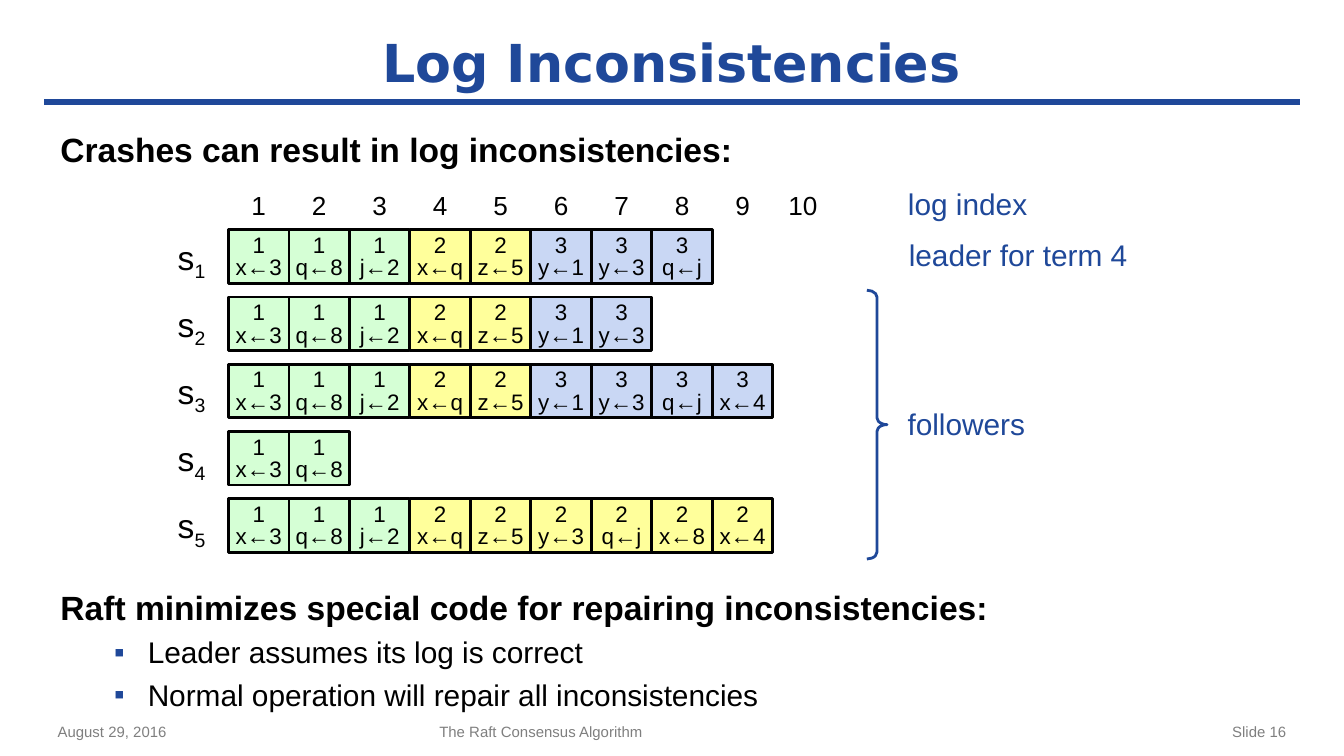
import pptx
import pptx.dml.color
import pptx.enum.shapes
import pptx.enum.text
import pptx.oxml
import pptx.oxml.ns
import pptx.util

Inches = pptx.util.Inches
Pt = pptx.util.Pt
ALIGN = pptx.enum.text.PP_ALIGN
ANCHOR = pptx.enum.text.MSO_ANCHOR
SHAPE = pptx.enum.shapes.MSO_SHAPE

BLUE, BLACK, GRAY = "1F4899", "000000", "7F7F7F"
TERM_FILLS = {1: "D5FFD5", 2: "FFFF9B", 3: "C9D7F4"}
CELL_WIDTH, CELL_HEIGHT, ROW_PITCH = 0.45, 0.4, 0.5
INDEX_COUNT = 10

COMMON_LOG = [(1, "x←3"), (1, "q←8"), (1, "j←2"), (2, "x←q"), (2, "z←5")]
LEADER_LOG = COMMON_LOG + [(3, "y←1"), (3, "y←3"), (3, "q←j")]
SERVER_LOGS = [
    LEADER_LOG,
    LEADER_LOG[:7],
    LEADER_LOG + [(3, "x←4")],
    COMMON_LOG[:2],
    COMMON_LOG + [(2, "y←3"), (2, "q←j"), (2, "x←8"), (2, "x←4")],
]


def color(hex_string):
    return pptx.dml.color.RGBColor.from_string(hex_string)


def add_run(paragraph, text, size, text_color=BLACK, bold=False, font_name="Arial"):
    run = paragraph.add_run()
    run.text = text
    run.font.name = font_name
    run.font.size = Pt(size)
    run.font.bold = bold
    run.font.color.rgb = color(text_color)
    return run


def set_margins(frame, left=0, top=0, right=0, bottom=0):
    frame.margin_left, frame.margin_top = Inches(left), Inches(top)
    frame.margin_right, frame.margin_bottom = Inches(right), Inches(bottom)


def add_text_box(slide, left, top, width, height, alignment=ALIGN.LEFT, wrap=True):
    box = slide.shapes.add_textbox(
        Inches(left), Inches(top), Inches(width), Inches(height))
    frame = box.text_frame
    frame.word_wrap = wrap
    set_margins(frame)
    frame.paragraphs[0].alignment = alignment
    return frame


def add_title(slide, left, top, width, height):
    title = slide.shapes.title
    title.left, title.top = Inches(left), Inches(top)
    title.width, title.height = Inches(width), Inches(height)
    frame = title.text_frame
    frame.vertical_anchor = ANCHOR.MIDDLE
    paragraph = frame.paragraphs[0]
    paragraph.alignment = ALIGN.CENTER
    add_run(paragraph, "Log Inconsistencies", 28, BLUE, True, "DejaVu Sans")

    rule_y = Inches(top + height)
    rule = slide.shapes.add_connector(
        pptx.enum.shapes.MSO_CONNECTOR.STRAIGHT,
        Inches(left + 0.02), rule_y, Inches(left + width - 0.01), rule_y)
    rule.line.color.rgb = color(BLUE)
    rule.line.width = Pt(3.5)
    properties = rule.element.find(pptx.oxml.ns.qn("p:spPr"))
    properties.find(pptx.oxml.ns.qn("a:ln")).set("cap", "sq")
    properties.append(pptx.oxml.parse_xml(
        f'<a:effectLst {pptx.oxml.ns.nsdecls("a")}/>'))


def add_bullet(paragraph):
    properties = paragraph._p.get_or_add_pPr()
    properties.set("marL", str(Inches(0.65)))
    properties.set("indent", str(Inches(-0.25)))
    properties.set("lvl", "1")
    namespace = pptx.oxml.ns.nsdecls("a")
    for xml in (
        f'<a:buClr {namespace}><a:srgbClr val="{BLUE}"/></a:buClr>',
        f'<a:buFont {namespace} typeface="Arial"/>',
        f'<a:buChar {namespace} char="▪"/>',
    ):
        properties.append(pptx.oxml.parse_xml(xml))


def add_statement(slide, left, top, width, height, heading, bullets=()):
    frame = add_text_box(slide, left, top, width, height)
    add_run(frame.paragraphs[0], heading, 18, bold=True)
    for bullet in bullets:
        paragraph = frame.add_paragraph()
        paragraph.space_before = Pt(3.5)
        add_bullet(paragraph)
        add_run(paragraph, bullet, 16)


def add_log_entry(slide, left, top, term, command):
    entry = slide.shapes.add_shape(
        SHAPE.RECTANGLE, Inches(left), Inches(top),
        Inches(CELL_WIDTH), Inches(CELL_HEIGHT))
    entry.shadow.inherit = False
    entry.fill.solid()
    entry.fill.fore_color.rgb = color(TERM_FILLS[term])
    entry.line.color.rgb = color(BLACK)
    entry.line.width = Pt(1.5)
    frame = entry.text_frame
    set_margins(frame, top=0.02)
    frame.vertical_anchor = ANCHOR.MIDDLE
    paragraph = frame.paragraphs[0]
    paragraph.alignment = ALIGN.CENTER
    paragraph.line_spacing = Pt(12)
    add_run(paragraph, str(term), 12)
    paragraph.add_line_break()
    add_run(paragraph, command, 12)


def add_logs(slide, left, top):
    cells_left, cells_top = left + 0.4, top + 0.3
    for index in range(INDEX_COUNT):
        frame = add_text_box(slide, cells_left + index * CELL_WIDTH, top,
                             CELL_WIDTH, 0.24, ALIGN.CENTER)
        add_run(frame.paragraphs[0], str(index + 1), 14)
    for row, log in enumerate(SERVER_LOGS):
        row_top = cells_top + row * ROW_PITCH
        frame = add_text_box(slide, left, row_top + 0.05, 0.25, 0.3, ALIGN.CENTER)
        add_run(frame.paragraphs[0], "s", 18)
        subscript = add_run(frame.paragraphs[0], str(row + 1), 18)
        subscript.font._element.set("baseline", "-25000")
        for column, (term, command) in enumerate(log):
            add_log_entry(slide, cells_left + column * CELL_WIDTH, row_top,
                          term, command)


def add_annotations(slide, left, top):
    for text, offset, width in (
        ("log index", 0, 0.9),
        ("leader for term 4", 0.38, 1.65),
        ("followers", 1.64, 0.88),
    ):
        frame = add_text_box(slide, left + 0.3, top + offset, width, 0.27,
                             ALIGN.CENTER, wrap=False)
        add_run(frame.paragraphs[0], text, 16, BLUE)
    brace = slide.shapes.add_shape(
        SHAPE.RIGHT_BRACE, Inches(left), Inches(top + 0.78), Inches(0.15), Inches(2))
    brace.shadow.inherit = False
    brace.adjustments[0] = 0.34
    brace.adjustments[1] = 0.5
    brace.fill.background()
    brace.line.color.rgb = color(BLUE)
    brace.line.width = Pt(1.5)


def add_footer(slide, left, top, height):
    for text, offset, width, alignment in (
        ("August 29, 2016", 0, 2.5, ALIGN.LEFT),
        ("The Raft Consensus Algorithm", 2.84, 3.75, ALIGN.LEFT),
        ("Slide 16", 6.84, 2.5, ALIGN.RIGHT),
    ):
        frame = add_text_box(slide, left + offset, top, width, height, alignment)
        set_margins(frame, left=0.1, right=0.1)
        frame.vertical_anchor = ANCHOR.MIDDLE
        add_run(frame.paragraphs[0], text, 8, GRAY)


def main():
    presentation = pptx.Presentation()
    presentation.slide_width = Inches(10)
    presentation.slide_height = Inches(10) * 9 // 16
    slide = presentation.slides.add_slide(presentation.slide_layouts[5])
    add_title(slide, 0.33, 0.16, 9.33, 0.6)
    add_statement(slide, 0.45, 0.96, 9.1, 0.3,
                  "Crashes can result in log inconsistencies:")
    add_logs(slide, 1.3, 1.41)
    add_annotations(slide, 6.45, 1.38)
    add_statement(slide, 0.45, 4.37, 9.1, 0.9,
                  "Raft minimizes special code for repairing inconsistencies:",
                  ("Leader assumes its log is correct",
                   "Normal operation will repair all inconsistencies"))
    add_footer(slide, 0.33, 5.32, 0.24)
    presentation.save("out.pptx")


if __name__ == "__main__":
    main()
